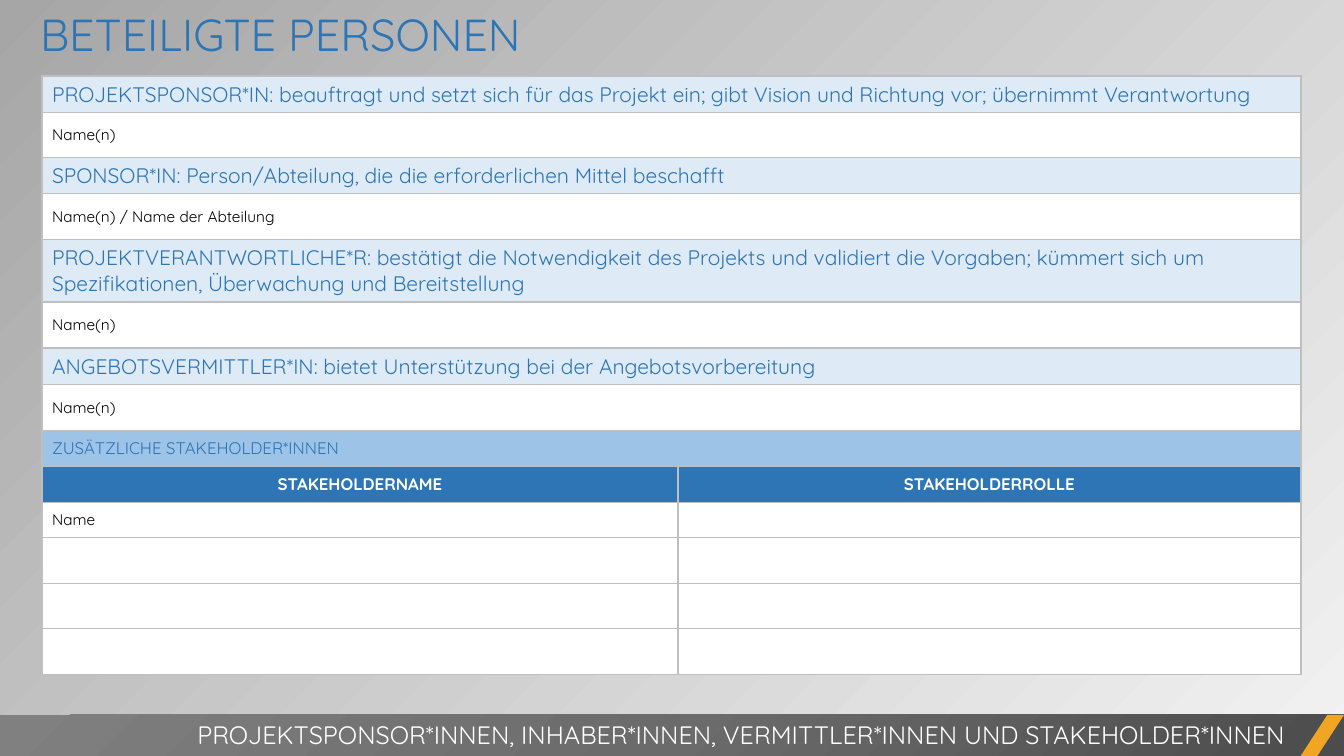
"""Builds the slide that lists the people involved in a project."""
from dataclasses import dataclass

from lxml.etree import SubElement as Sub
from pptx import Presentation
from pptx.dml.color import RGBColor as RGB
from pptx.enum.shapes import MSO_SHAPE as SHAPE
from pptx.enum.text import MSO_ANCHOR as ANCHOR, PP_ALIGN as ALIGN
from pptx.oxml.ns import qn
from pptx.util import Pt

TITLE = "BETEILIGTE PERSONEN"
FOOTER = "PROJEKTSPONSOR*INNEN, INHABER*INNEN, VERMITTLER*INNEN UND STAKEHOLDER*INNEN"
ROWS = [
    ("role", 36, ["PROJEKTSPONSOR*IN: beauftragt und setzt sich für das Projekt ein; "
                  "gibt Vision und Richtung vor; übernimmt Verantwortung"]),
    ("name", 45, ["Name(n)"]),
    ("role", 36, ["SPONSOR*IN: Person/Abteilung, die die erforderlichen Mittel beschafft"]),
    ("name", 46, ["Name(n) / Name der Abteilung"]),
    ("role", 51, ["PROJEKTVERANTWORTLICHE*R: bestätigt die Notwendigkeit des Projekts und "
                  "validiert die Vorgaben; kümmert sich um Spezifikationen, Überwachung "
                  "und Bereitstellung"]),
    ("name", 46, ["Name(n)"]),
    ("role", 35, ["ANGEBOTSVERMITTLER*IN: bietet Unterstützung bei der Angebotsvorbereitung"]),
    ("name", 46, ["Name(n)"]),
    ("group", 36, ["ZUSÄTZLICHE STAKEHOLDER*INNEN"]),
    ("head", 36, ["STAKEHOLDERNAME", "STAKEHOLDERROLLE"]),
    ("name", 35, ["Name", ""]),
    ("name", 46, ["", ""]),
    ("name", 45, ["", ""]),
    ("name", 46, ["", ""]),
]
COLS = [636, 623]
WIDTH, HEIGHT = 1344, 756


@dataclass(frozen=True)
class Theme:
    """Colours and type sizes."""
    font: str = "Quicksand"
    blue: str = "2E75B6"
    sky: str = "9DC3E6"
    pale: str = "DEEBF7"
    white: str = "FFFFFF"
    black: str = "000000"
    rule: str = "BFBFBF"
    gold: str = "F0A622"
    back: tuple = ((0, "F2F2F2"), (100, "A6A6A6"))
    band: tuple = ((0, "4C4C4C"), (50, "6B6B6B"), (100, "808080"))
    title: int = 32
    foot: int = 18
    role: int = 15
    group: int = 12
    name: int = 11


LOOK = Theme()
STYLES = {
    "role": (LOOK.pale, dict(size=LOOK.role, color=LOOK.blue)),
    "name": (LOOK.white, dict(size=LOOK.name)),
    "group": (LOOK.sky, dict(size=LOOK.group, color=LOOK.blue)),
    "head": (LOOK.blue, dict(size=LOOK.group, color=LOOK.white, bold=True,
                             align=ALIGN.CENTER)),
}


def px(*sizes):
    return [round(size * 12192000 / WIDTH) for size in sizes]


def write(frame, text, size, color=LOOK.black, bold=False, align=ALIGN.LEFT,
          anchor=ANCHOR.MIDDLE):
    frame.word_wrap = True
    frame.vertical_anchor = anchor
    para = frame.paragraphs[0]
    para.alignment = align
    para.font.size = Pt(size)
    if text:
        run = para.add_run()
        run.text = text
        font = run.font
        font.name, font.size, font.bold = LOOK.font, Pt(size), bold
        font.color.rgb = RGB.from_string(color)


def paint(fill, color):
    fill.solid()
    fill.fore_color.rgb = RGB.from_string(color)


def blend(fill, root, stops):
    fill.gradient()
    grad = root.find(".//" + qn("a:gradFill"))
    for child in list(grad):
        grad.remove(child)
    steps = Sub(grad, qn("a:gsLst"))
    for pos, color in stops:
        step = Sub(steps, qn("a:gs"), pos=str(pos * 1000))
        Sub(step, qn("a:srgbClr"), val=color)
    return grad


def border(cell):
    props = cell._tc.get_or_add_tcPr()
    for spot, side in enumerate("LRTB"):
        line = Sub(props, qn("a:ln" + side), w=str(Pt(1)))
        Sub(Sub(line, qn("a:solidFill")), qn("a:srgbClr"), val=LOOK.rule)
        props.insert(spot, line)


def shape(slide, kind, *box):
    item = slide.shapes.add_shape(kind, *px(*box))
    item.shadow.inherit = False
    item.line.fill.background()
    return item


def people(slide):
    high = sum(row[1] for row in ROWS)
    table = slide.shapes.add_table(len(ROWS), len(COLS),
                                   *px(42, 76, sum(COLS), high)).table
    for col, wide in zip(table.columns, px(*COLS)):
        col.width = wide
    for spot, (kind, tall, texts) in enumerate(ROWS):
        table.rows[spot].height = px(tall)[0]
        color, style = STYLES[kind]
        cells = list(table.rows[spot].cells)
        for cell in cells:
            paint(cell.fill, color)
            border(cell)
        if len(texts) == 1:
            cells[0].merge(cells[1])
        for cell, text in zip(cells, texts):
            cell.vertical_anchor = ANCHOR.MIDDLE
            write(cell.text_frame, text, anchor=None, **style)
            cell.vertical_anchor = ANCHOR.MIDDLE


def footer(slide):
    band = shape(slide, SHAPE.RECTANGLE, 0, 715, WIDTH, 42)
    grad = blend(band.fill, band._element, LOOK.band)
    shade = Sub(grad, qn("a:path"))
    shade.set("path", "circle")
    Sub(shade, qn("a:fillToRect"), l="100000", t="100000")
    mark = shape(slide, SHAPE.PARALLELOGRAM, 1300, 715, 44, 42)
    mark.adjustments[0] = 0.65
    paint(mark.fill, LOOK.gold)
    label = slide.shapes.add_textbox(*px(0, 714, 1295, 40))
    write(label.text_frame, FOOTER, LOOK.foot, LOOK.white, align=ALIGN.RIGHT,
          anchor=ANCHOR.TOP)


def main():
    deck = Presentation()
    deck.slide_width, deck.slide_height = px(WIDTH, HEIGHT)
    slide = deck.slides.add_slide(deck.slide_layouts[5])
    grad = blend(slide.background.fill, slide._element, LOOK.back)
    Sub(grad, qn("a:lin"), ang=str(225 * 60000), scaled="0")
    title = slide.shapes.title
    title.left, title.top, title.width, title.height = px(30, 1, 866, 65)
    write(title.text_frame, TITLE, LOOK.title, LOOK.blue)
    people(slide)
    footer(slide)
    deck.save("out.pptx")


if __name__ == "__main__":
    main()
